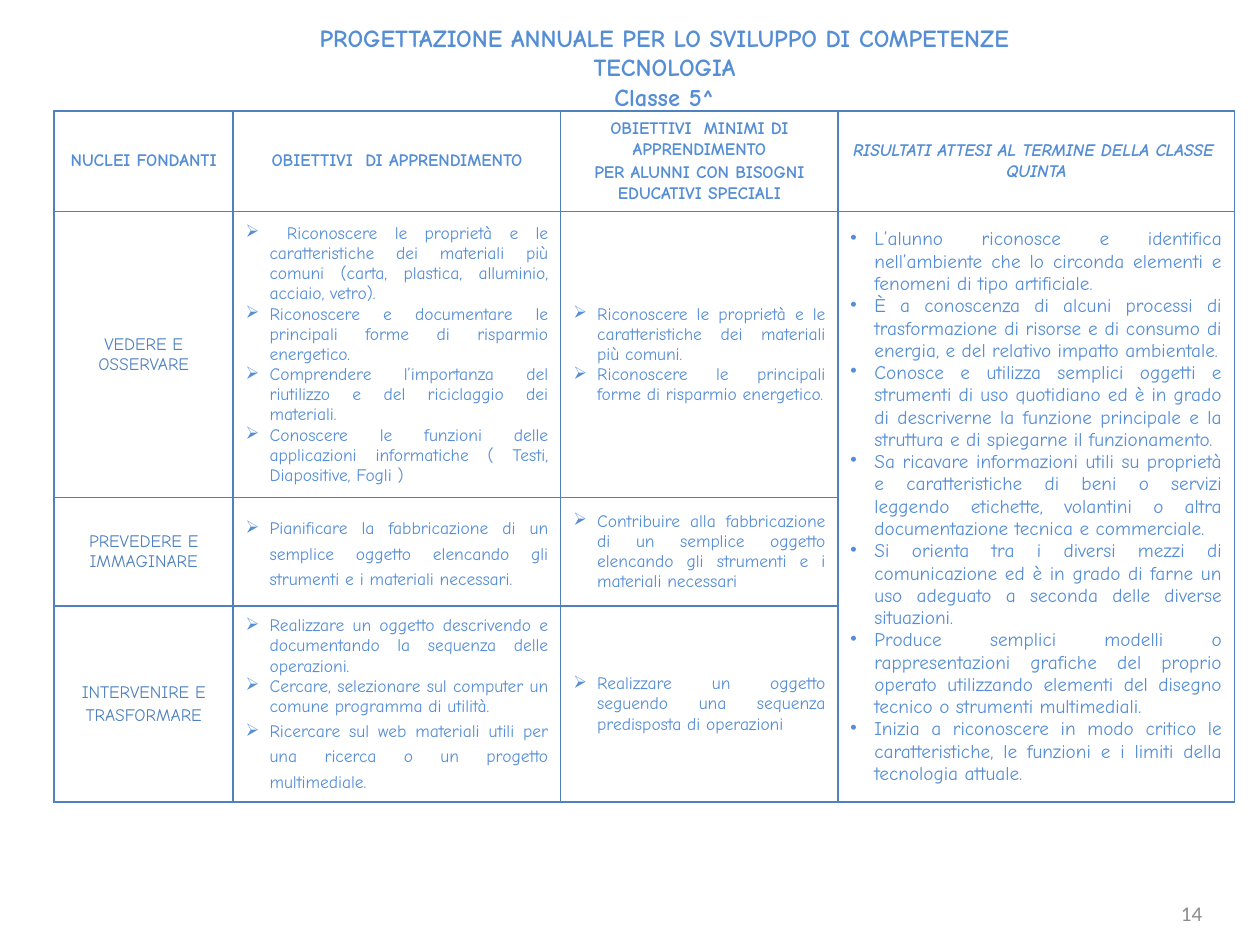
"""Build the fifth-year technology planning slide with its table of objectives."""
from lxml.etree import SubElement
from pptx import Presentation
from pptx.dml.color import RGBColor
from pptx.enum.text import MSO_ANCHOR, MSO_AUTO_SIZE, PP_ALIGN
from pptx.oxml.ns import qn
from pptx.util import Inches, Pt

LIGHT_BLUE = RGBColor(0x55, 0x8E, 0xD5)
BLUE = RGBColor(0x4F, 0x81, 0xBD)
GREY = RGBColor(0x8C, 0x8C, 0x8C)
FONT = "Comic Neue"

TITLE = [
    "PROGETTAZIONE ANNUALE PER LO SVILUPPO DI COMPETENZE",
    "TECNOLOGIA",
    "Classe 5^",
]
COLUMN_WIDTHS = [1.42, 2.6, 2.2, 3.15]
ROW_HEIGHTS = [0.8, 2.27, 0.86, 1.55]
HEADINGS = [
    ["NUCLEI FONDANTI"],
    ["OBIETTIVI  DI APPRENDIMENTO"],
    ["OBIETTIVI  MINIMI DI APPRENDIMENTO", "PER ALUNNI CON BISOGNI EDUCATIVI SPECIALI"],
    ["RISULTATI ATTESI AL TERMINE DELLA CLASSE  QUINTA"],
]
CORES = [["VEDERE E OSSERVARE"], ["PREVEDERE E IMMAGINARE"], ["INTERVENIRE E", "TRASFORMARE"]]
OBJECTIVES = [
    [
        " Riconoscere le proprietà e le caratteristiche dei materiali più comuni (carta, plastica, alluminio, acciaio, vetro).",
        "Riconoscere e documentare le principali forme di risparmio energetico.",
        "Comprendere l’importanza del riutilizzo e del riciclaggio dei materiali.",
        "Conoscere le funzioni delle applicazioni informatiche ( Testi, Diapositive, Fogli )",
    ],
    ["Pianificare la fabbricazione di un semplice oggetto elencando gli strumenti e i materiali necessari."],
    [
        "Realizzare un oggetto descrivendo e documentando la sequenza delle operazioni.",
        "Cercare, selezionare sul computer un comune programma di utilità.",
        "Ricercare sul web materiali utili per una ricerca o un progetto multimediale.",
    ],
]
MINIMUM_OBJECTIVES = [
    [
        "Riconoscere le proprietà e le caratteristiche dei materiali più comuni.",
        "Riconoscere le principali forme di risparmio energetico.",
    ],
    ["Contribuire alla fabbricazione di un semplice oggetto elencando gli strumenti e i materiali necessari"],
    ["Realizzare un oggetto seguendo una sequenza predisposta di operazioni"],
]
EXPECTED_RESULTS = [
    "L’alunno riconosce e identifica nell’ambiente che lo circonda elementi e fenomeni di tipo artificiale.",
    "È a conoscenza di alcuni processi di trasformazione di risorse e di consumo di energia, e del relativo impatto ambientale.",
    "Conosce e utilizza semplici oggetti e strumenti di uso quotidiano ed è in grado di descriverne la funzione principale e la struttura e di spiegarne il funzionamento.",
    "Sa ricavare informazioni utili su proprietà e caratteristiche di beni o servizi leggendo etichette, volantini o altra documentazione tecnica e commerciale.",
    "Si orienta tra i diversi mezzi di comunicazione ed è in grado di farne un uso adeguato a seconda delle diverse situazioni.",
    "Produce semplici modelli o rappresentazioni grafiche del proprio operato utilizzando elementi del disegno tecnico o strumenti multimediali.",
    "Inizia a riconoscere in modo critico le caratteristiche, le funzioni e i limiti della tecnologia attuale.",
]


def write(frame, lines, size, color, align=PP_ALIGN.CENTER, bold=False, font=FONT):
    frame.text = "\n".join(lines)
    for paragraph in frame.paragraphs:
        paragraph.alignment = align
        paragraph.font.name = font
        paragraph.font.size = Pt(size)
        paragraph.font.bold = bold
        paragraph.font.color.rgb = color
    return frame.paragraphs


def write_list(cell, lines, size, bullet):
    items = write(cell.text_frame, lines, size, LIGHT_BLUE, PP_ALIGN.JUSTIFY)
    for item in items:
        properties = item._p.get_or_add_pPr()
        properties.set("marL", str(Inches(0.19)))
        properties.set("indent", str(Inches(-0.19)))
        bullet_char = SubElement(properties, qn("a:buChar"))
        bullet_char.set("char", bullet)
        properties.insert_element_before(bullet_char, "a:tabLst", "a:defRPr", "a:extLst")
    return items


presentation = Presentation()
presentation.slide_width = Inches(10)
presentation.slide_height = Inches(7.5)
slide = presentation.slides.add_slide(presentation.slide_layouts[5])

title = slide.shapes.title
title.left, title.top, title.width, title.height = map(Inches, (1.94, 0.13, 6.67, 0.81))
write(title.text_frame, TITLE, 14, LIGHT_BLUE, bold=True)
title.text_frame.word_wrap = False
title.text_frame.auto_size = MSO_AUTO_SIZE.SHAPE_TO_FIT_TEXT
title.text_frame.vertical_anchor = MSO_ANCHOR.TOP

plan = slide.shapes.add_table(
    len(ROW_HEIGHTS), len(COLUMN_WIDTHS), Inches(0.43), Inches(0.88),
    Inches(sum(COLUMN_WIDTHS)), Inches(sum(ROW_HEIGHTS)),
).table
plan.first_row = plan.horz_banding = False
for column, width in zip(plan.columns, COLUMN_WIDTHS):
    column.width = Inches(width)
for row, height in zip(plan.rows, ROW_HEIGHTS):
    row.height = Inches(height)

for cell in plan.iter_cells():
    cell.vertical_anchor = MSO_ANCHOR.MIDDLE
    for edge in ("a:lnL", "a:lnR", "a:lnT", "a:lnB"):
        border = SubElement(cell._tc.get_or_add_tcPr(), qn(edge), w=str(Pt(1)))
        border_fill = SubElement(border, qn("a:solidFill"))
        SubElement(border_fill, qn("a:srgbClr"), val=str(BLUE))
    cell.fill.background()

for index, heading in enumerate(HEADINGS):
    for paragraph in write(plan.cell(0, index).text_frame, heading, 10, LIGHT_BLUE, bold=True):
        paragraph.space_before = Pt(2)
        paragraph.font.italic = index == len(HEADINGS) - 1

for index, (core, objectives, minimum) in enumerate(zip(CORES, OBJECTIVES, MINIMUM_OBJECTIVES), 1):
    for paragraph in write(plan.cell(index, 0).text_frame, core, 10, BLUE):
        paragraph.space_before = Pt(2 if index > 1 else 0)
    objective_items = write_list(plan.cell(index, 1), objectives, 10, "➢")
    if index > 1:
        objective_items[-1].line_spacing = Pt(14.4)
    write_list(plan.cell(index, 2), minimum, 10, "➢")

plan.cell(1, 3).merge(plan.cell(3, 3))
write_list(plan.cell(1, 3), EXPECTED_RESULTS, 11, "•")

page_number = slide.shapes.add_textbox(Inches(7.31), Inches(7.05), Inches(2.33), Inches(0.4)).text_frame
page_number.word_wrap = True
page_number.vertical_anchor = MSO_ANCHOR.MIDDLE
write(page_number, ["14"], 12, GREY, PP_ALIGN.RIGHT, font="Calibri")

presentation.save("out.pptx")
